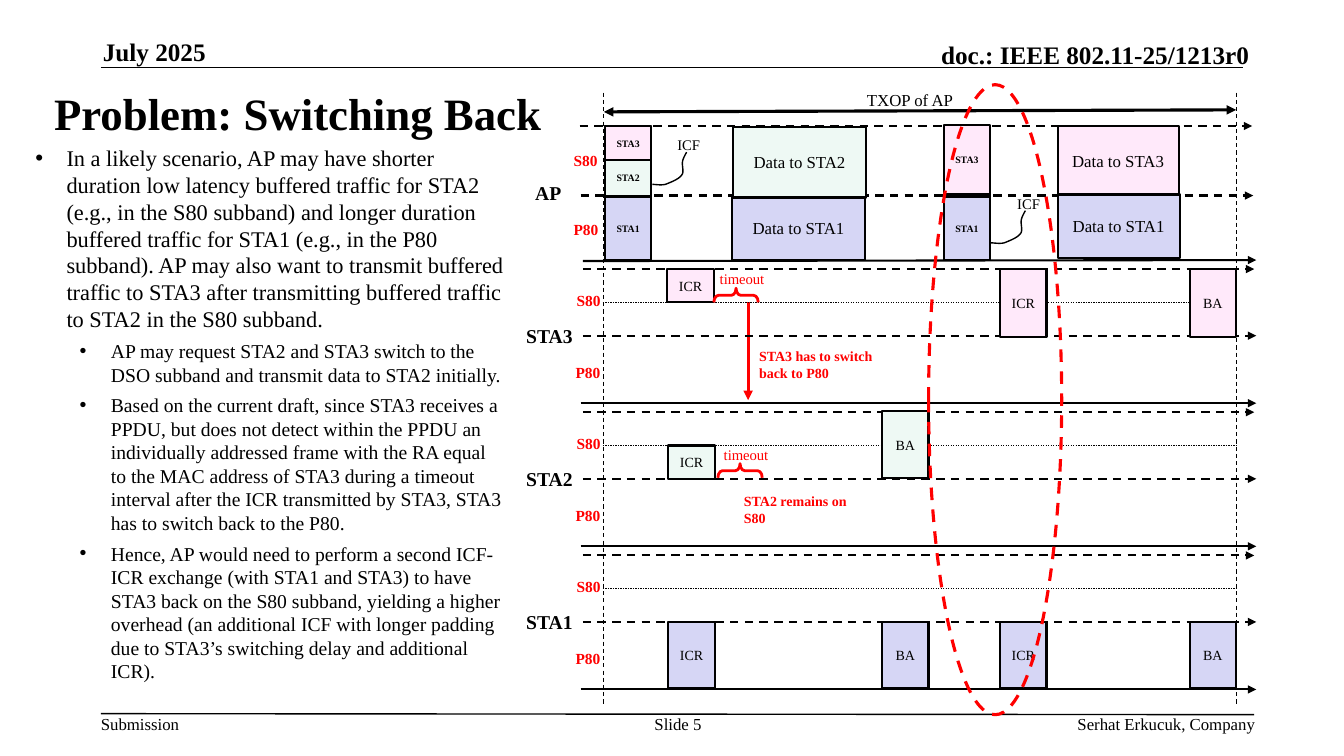
from typing import NamedTuple, Optional

from lxml import etree
from pptx import Presentation
from pptx.dml.color import RGBColor
from pptx.enum.dml import MSO_LINE
from pptx.enum.shapes import MSO_CONNECTOR, MSO_SHAPE
from pptx.enum.text import MSO_ANCHOR, MSO_AUTO_SIZE, PP_ALIGN
from pptx.oxml.ns import qn
from pptx.util import Inches, Pt

STRAIGHT = MSO_CONNECTOR.STRAIGHT
RECTANGLE, OVAL, BRACE = MSO_SHAPE.RECTANGLE, MSO_SHAPE.OVAL, MSO_SHAPE.LEFT_BRACE
DASH = MSO_LINE.DASH
LEFT, CENTER, RIGHT = PP_ALIGN.LEFT, PP_ALIGN.CENTER, PP_ALIGN.RIGHT
TOP, MIDDLE, BOTTOM = MSO_ANCHOR.TOP, MSO_ANCHOR.MIDDLE, MSO_ANCHOR.BOTTOM
FIT, NO_FIT = MSO_AUTO_SIZE.SHAPE_TO_FIT_TEXT, MSO_AUTO_SIZE.NONE

FONT = "Times New Roman"
BLACK, RED = "000000", "FF0000"
BLUE, GREEN, PINK = "D6D6F5", "EEF9F4", "FFE9FA"
BLOCK_WIDTH = 0.46
STATION_PITCH = 1.42


class Line(NamedTuple):
    x1: float
    y1: float
    x2: float
    y2: float
    width: float = 1.5
    dashed: bool = False
    head: bool = False
    tail: bool = False
    color: str = BLACK


class Block(NamedTuple):
    left: float
    top: float
    height: float
    fill: Optional[str] = None
    text: str = ""
    size: float = 10
    bold: bool = False
    width: float = BLOCK_WIDTH


class Label(NamedTuple):
    left: float
    top: float
    width: float
    height: float
    text: str
    size: float
    bold: bool = False
    color: str = BLACK
    align: PP_ALIGN = LEFT
    anchor: MSO_ANCHOR = TOP
    margins: bool = True
    wrap: bool = True


def rgb(color: str) -> RGBColor:
    return RGBColor.from_string(color)


def add_run(paragraph, text: str, size: float, bold: bool = False, color: str = BLACK) -> None:
    run = paragraph.add_run()
    run.text = text
    run.font.name = FONT
    run.font.size = Pt(size)
    run.font.bold = bold
    run.font.color.rgb = rgb(color)


def place(shape, left: float, top: float, width: float, height: float) -> None:
    shape.left, shape.top = Inches(left), Inches(top)
    shape.width, shape.height = Inches(width), Inches(height)


def set_outline(shape, color: str, width: float, dashed: bool = False) -> None:
    shape.line.color.rgb = rgb(color)
    shape.line.width = Pt(width)
    if dashed:
        shape.line.dash_style = DASH


def add_line(shapes, line: Line) -> None:
    connector = shapes.add_connector(
        STRAIGHT, Inches(line.x1), Inches(line.y1), Inches(line.x2), Inches(line.y2))
    set_outline(connector, line.color, line.width, line.dashed)
    outline = connector.line._get_or_add_ln()
    for tag, wanted in (("a:headEnd", line.head), ("a:tailEnd", line.tail)):
        if wanted:
            etree.SubElement(outline, qn(tag), type="triangle")
    etree.SubElement(connector._element.spPr, qn("a:effectLst"))


def add_outline_shape(shapes, kind, left: float, top: float, width: float, height: float,
                      color: str, weight: float, dashed: bool = False):
    shape = shapes.add_shape(kind, Inches(left), Inches(top), Inches(width), Inches(height))
    shape.shadow.inherit = False
    shape.fill.background()
    set_outline(shape, color, weight, dashed)
    return shape


def add_block(shapes, block: Block) -> None:
    shape = add_outline_shape(
        shapes, RECTANGLE, block.left, block.top, block.width, block.height, BLACK, 1.5)
    if block.fill:
        shape.fill.solid()
        shape.fill.fore_color.rgb = rgb(block.fill)
    if block.text:
        frame = shape.text_frame
        frame.margin_left = frame.margin_right = 0
        frame.vertical_anchor = MIDDLE
        frame.paragraphs[0].alignment = CENTER
        add_run(frame.paragraphs[0], block.text, block.size, block.bold)


def add_label(shapes, label: Label) -> None:
    box = shapes.add_textbox(Inches(label.left), Inches(label.top),
                             Inches(label.width), Inches(label.height))
    frame = box.text_frame
    frame.word_wrap = label.wrap
    frame.auto_size = FIT if label.margins else NO_FIT
    frame.vertical_anchor = label.anchor
    if not label.margins:
        frame.margin_left = frame.margin_right = frame.margin_top = frame.margin_bottom = 0
    frame.paragraphs[0].alignment = label.align
    add_run(frame.paragraphs[0], label.text, label.size, label.bold, label.color)


def add_callout_curve(shapes, left: float, top: float) -> None:
    """Draw the wavy leader from a block up to its ICF label."""
    knots = [(0, 0.32), (0.04, 0.32), (0.08, 0.33), (0.13, 0.32), (0.18, 0.30), (0.26, 0.27),
             (0.29, 0.23), (0.32, 0.20), (0.29, 0.13), (0.30, 0.09), (0.31, 0.05),
             (0.33, 0.02), (0.34, 0)]
    points = []
    for start in range(0, len(knots) - 1, 3):
        for step in range(1, 9):
            t = step / 8
            weights = ((1 - t) ** 3, 3 * t * (1 - t) ** 2, 3 * t * t * (1 - t), t ** 3)
            segment = knots[start:start + 4]
            points.append(tuple(Inches(origin + sum(w * knot[axis] for w, knot in zip(weights, segment)))
                                for axis, origin in enumerate((left, top))))
    builder = shapes.build_freeform(Inches(left), Inches(top + knots[0][1]))
    builder.add_line_segments(points, close=False)
    curve = builder.convert_to_shape()
    curve.shadow.inherit = False
    curve.fill.background()
    set_outline(curve, BLACK, 1)


BULLETS = [
    (0, "In a likely scenario, AP may have shorter duration low latency buffered traffic for STA2 (e.g., in the S80 subband) and longer duration buffered traffic for STA1 (e.g., in the P80 subband). AP may also want to transmit buffered traffic to STA3 after transmitting buffered traffic to STA2 in the S80 subband."),
    (1, "AP may request STA2 and STA3 switch to the DSO subband and transmit data to STA2 initially."),
    (1, "Based on the current draft, since STA3 receives a PPDU, but does not detect within the PPDU an individually addressed frame with the RA equal to the MAC address of STA3 during a timeout interval after the ICR transmitted by STA3, STA3 has to switch back to the P80."),
    (1, "Hence, AP would need to perform a second ICF-ICR exchange (with STA1 and STA3) to have STA3 back on the S80 subband, yielding a higher overhead (an additional ICF with longer padding due to STA3’s switching delay and additional ICR)."),
]

LINES = [
    # Header and footer rules
    Line(1, 0.67, 12.33, 0.67, 1), Line(1, 7.08, 12.44, 7.09, 1),
    # TXOP limits and span
    Line(5.99, 0.92, 5.99, 7, 0.75, True), Line(12.26, 0.92, 12.26, 7, 0.75, True),
    Line(5.99, 1.11, 12.26, 1.09, 2.25, head=True, tail=True),
    # AP time axes
    Line(5.75, 1.25, 12.42, 1.25, dashed=True, tail=True),
    Line(5.76, 1.94, 12.43, 1.94, dashed=True, tail=True),
    Line(5.78, 2.59, 12.46, 2.58, tail=True),
    # STA3 switch back
    Line(7.42, 3.97, 7.42, 3, 2.25, head=True, color=RED),
]

BLOCKS = [
    # AP
    Block(6, 1.25, 1.33), Block(6, 1.95, 0.63, BLUE, "STA1", 7, True),
    Block(6, 1.58, 0.37, GREEN, "STA2", 7, True), Block(6, 1.25, 0.34, PINK, "STA3", 7, True),
    Block(7.26, 1.95, 0.63, BLUE, "Data to STA1", 12, width=1.32),
    Block(7.27, 1.26, 0.7, GREEN, "Data to STA2", 12, width=1.32),
    Block(9.36, 1.25, 1.33), Block(9.36, 1.95, 0.63, BLUE, "STA1", 7, True),
    Block(9.36, 1.24, 0.69, PINK, "STA3", 7, True),
    Block(10.49, 1.25, 0.69, PINK, "Data to STA3", 12, width=1.2),
    Block(10.49, 1.93, 0.63, BLUE, "Data to STA1", 12, width=1.21),
    # STA3
    Block(6.62, 2.67, 0.33, PINK, "ICR"), Block(9.92, 2.67, 0.67, PINK, "ICR"),
    Block(11.8, 2.67, 0.67, PINK, "BA"),
    # STA2
    Block(6.63, 4.42, 0.33, GREEN, "ICR"), Block(8.75, 4.08, 0.66, GREEN, "BA"),
    # STA1
    *(Block(left, 6.17, 0.66, BLUE, text)
      for left, text in ((6.63, "ICR"), (8.75, "BA"), (9.92, "ICR"), (11.8, "BA"))),
]

LABELS = [
    # Header and footer
    Label(1.02, 0.36, 2.73, 0.3, "July 2025", 18, True, anchor=BOTTOM, margins=False),
    Label(7.29, 0.39, 5.1, 0.3, "doc.: IEEE 802.11-25/1213r0", 18, True,
          align=RIGHT, anchor=BOTTOM, margins=False),
    Label(1, 7.08, 0.79, 0.2, "Submission", 12, margins=False, wrap=False),
    Label(6.34, 7.08, 0.77, 0.4, "Slide 5", 12, align=CENTER, margins=False),
    Label(7.81, 7.08, 4.64, 0.2, "Serhat Erkucuk, Company", 12, align=RIGHT, margins=False),
    # Diagram
    Label(5.21, 1.75, 0.46, 0.34, "AP", 14, True, wrap=False),
    Label(5.59, 1.45, 0.46, 0.29, "S80", 11, True, RED),
    Label(5.59, 2.13, 0.46, 0.29, "P80", 11, True, RED),
    Label(8.5, 0.84, 1.58, 0.3, "TXOP of AP", 12),
    Label(6.62, 1.3, 0.51, 0.29, "ICF", 10.5), Label(9.99, 1.88, 0.51, 0.29, "ICF", 10.5),
    Label(7.04, 2.63, 0.76, 0.29, "timeout", 10.5, color=RED),
    Label(7.08, 4.37, 0.76, 0.29, "timeout", 10.5, color=RED),
    Label(7.43, 3.4, 1.36, 0.44, "STA3 has to switch back to P80", 10, True, RED),
    Label(7.28, 4.84, 1.22, 0.44, "STA2 remains on S80", 10, True, RED),
]

# Time axes and labels of the three stations
for row, station in enumerate(("STA3", "STA2", "STA1")):
    offset = row * STATION_PITCH
    for x1, x2, y, width, dashed, arrow in (
            (5.78, 12.44, 2.67, 1.5, True, True), (5.98, 12.26, 3, 0.25, True, False),
            (5.78, 12.46, 3.33, 1.5, True, True), (5.76, 12.46, 4, 1.5, False, True)):
        LINES.append(Line(x1, y + offset, x2, y + offset, width, dashed, tail=arrow))
    LABELS += [Label(5.12, 3.16 + offset, 0.67, 0.34, station, 14, True, wrap=False),
               Label(5.62, 2.84 + offset, 0.46, 0.29, "S80", 11, True, RED),
               Label(5.61, 3.55 + offset, 0.46, 0.29, "P80", 11, True, RED)]


def fill_placeholders(slide) -> None:
    title, body = slide.shapes.title, slide.placeholders[1]
    place(title, 0.42, 0.83, 5.07, 0.57)
    title.text_frame.auto_size = NO_FIT
    title.text_frame.vertical_anchor = MIDDLE
    title.text_frame.paragraphs[0].alignment = CENTER
    add_run(title.text_frame.paragraphs[0], "Problem: Switching Back", 32, True)

    place(body, 0.25, 1.38, 4.85, 5.45)
    frame = body.text_frame
    frame.auto_size = NO_FIT
    for index, (level, text) in enumerate(BULLETS):
        paragraph = frame.add_paragraph() if index else frame.paragraphs[0]
        paragraph.level = level
        properties = paragraph._p.get_or_add_pPr()
        properties.set("marL", str(Inches(0.75 if level else 0.31)))
        properties.set("indent", str(Inches(-0.31)))
        etree.SubElement(properties, qn("a:buChar"), char="•")
        paragraph.space_before = Pt(5 if index else 0)
        add_run(paragraph, text, 14 if level else 16)


def main() -> None:
    presentation = Presentation()
    presentation.slide_width, presentation.slide_height = Inches(13.33), Inches(7.5)
    slide = presentation.slides.add_slide(presentation.slide_layouts[1])
    shapes = slide.shapes
    fill_placeholders(slide)
    for line in LINES:
        add_line(shapes, line)
    for block in BLOCKS:
        add_block(shapes, block)
    for left, top in ((6.47, 1.51), (9.83, 2.09)):
        add_callout_curve(shapes, left, top)
    # Timeout braces and the highlighted second exchange
    for left, top in ((7.23, 2.71), (7.27, 4.45)):
        brace = add_outline_shape(shapes, BRACE, left, top, 0.14, 0.44, RED, 2)
        brace.rotation = 90
        brace.adjustments[0] = 0.33
    add_outline_shape(shapes, OVAL, 9.21, 0.84, 1.32, 6.25, RED, 2.25, True)
    for label in LABELS:
        add_label(shapes, label)
    presentation.save("out.pptx")


if __name__ == "__main__":
    main()
